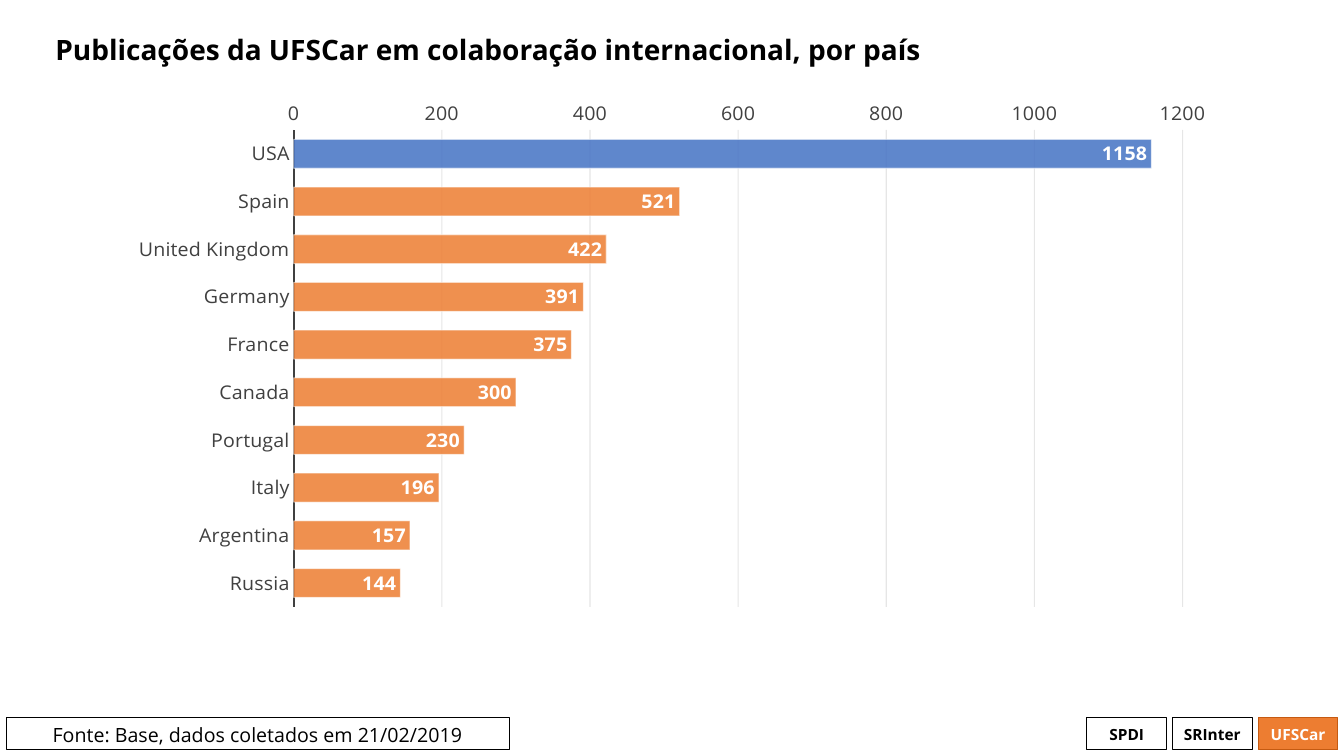
from lxml.etree import SubElement
from pptx import Presentation
from pptx.chart.data import CategoryChartData
from pptx.dml.color import RGBColor
from pptx.enum.chart import XL_AXIS_CROSSES, XL_CHART_TYPE, XL_LABEL_POSITION, XL_TICK_MARK
from pptx.enum.shapes import MSO_SHAPE
from pptx.enum.text import MSO_ANCHOR, PP_ALIGN
from pptx.oxml import parse_xml
from pptx.oxml.ns import nsdecls, qn
from pptx.util import Inches, Pt

BLACK = RGBColor(0x00, 0x00, 0x00)
WHITE = RGBColor(0xFF, 0xFF, 0xFF)
GRAY = RGBColor(0x40, 0x40, 0x40)
INK = RGBColor(0x0D, 0x0D, 0x0D)
ORANGE = RGBColor(0xED, 0x7D, 0x31)
RUST = RGBColor(0xC5, 0x5A, 0x11)
BLUE = RGBColor(0x44, 0x72, 0xC4)
FACE = "Open Sans"

DATA = {
    "USA": 1158, "Spain": 521, "United Kingdom": 422, "Germany": 391,
    "France": 375, "Canada": 300, "Portugal": 230, "Italy": 196,
    "Argentina": 157, "Russia": 144,
}
TABS = [("SPDI", None, BLACK, BLACK), ("SRInter", None, BLACK, BLACK),
        ("UFSCar", ORANGE, RUST, WHITE)]


def style(font, size, color, bold=False):
    for name, value in {"name": FACE, "size": Pt(size), "bold": bold}.items():
        setattr(font, name, value)
    font.color.rgb = color


def fade(fill, color, percent):
    fill.solid()
    fill.fore_color.rgb = color
    tint = next(fill._xPr.find(qn("a:solidFill")).iter(qn("a:srgbClr")))
    SubElement(tint, qn("a:alpha")).set("val", str(percent * 1000))


def paint(form, color):
    fade(form.fill, color, 85)
    form.line.width = Pt(0.75)
    fade(form.line.fill, WHITE, 50)


def label(frame, text, size, color, bold, anchor, align):
    frame.word_wrap = True
    frame.vertical_anchor = anchor
    par = frame.paragraphs[0]
    par.alignment = align
    run = par.add_run()
    run.text = text
    style(run.font, size, color, bold)
    return par


def add_box(slide, box, text, fill, edge, color, size, bold, anchor):
    shape = slide.shapes.add_shape(MSO_SHAPE.RECTANGLE, *map(Inches, box))
    shape.shadow.inherit = False
    if fill is None:
        shape.fill.background()
    else:
        shape.fill.solid()
        shape.fill.fore_color.rgb = fill
    shape.line.color.rgb = edge
    shape.line.width = Pt(0.75)
    label(shape.text_frame, text, size, color, bold, anchor, PP_ALIGN.CENTER)


def add_foot(slide, left, top, width, height):
    add_box(slide, (left, top, 4.99, height), "Fonte: Base, dados coletados em 21/02/2019",
            None, BLACK, BLACK, 14, False, MSO_ANCHOR.TOP)
    wide, step = 0.79, 0.85
    start = left + width - wide - step * (len(TABS) - 1)
    for i, (text, fill, edge, color) in enumerate(TABS):
        add_box(slide, (start + i * step, top, wide, height), text,
                fill, edge, color, 11, True, MSO_ANCHOR.MIDDLE)


def add_title(slide, *box):
    frame = slide.shapes.add_textbox(*map(Inches, box)).text_frame
    par = label(frame, "Publicações da UFSCar em colaboração internacional, por país",
                20, BLACK, True, MSO_ANCHOR.MIDDLE, PP_ALIGN.LEFT)
    par.line_spacing = 0.9


def set_plot(chart, **sides):
    area = chart._chartSpace.find(".//" + qn("c:plotArea"))
    for old in area.findall(qn("c:layout")):
        area.remove(old)
    modes = {"layoutTarget": "inner", "xMode": "edge", "yMode": "edge"}
    items = "".join(f'<c:{k} val="{v}"/>' for k, v in {**modes, **sides}.items())
    area.insert(0, parse_xml(
        f'<c:layout {nsdecls("c")}><c:manualLayout>{items}</c:manualLayout></c:layout>'))


def add_bars(slide, *box):
    data = CategoryChartData()
    data.categories = list(DATA)
    data.add_series("Series 1", list(DATA.values()))
    chart = slide.shapes.add_chart(XL_CHART_TYPE.BAR_CLUSTERED,
                                   *map(Inches, box), data).chart
    style(chart.font, 14, BLACK)
    chart.has_legend = False
    chart.has_title = False
    set_plot(chart, x=0.16, y=0.02, w=0.8, h=0.89)

    cats, vals = chart.category_axis, chart.value_axis
    for axis in (cats, vals):
        axis.major_tick_mark = axis.minor_tick_mark = XL_TICK_MARK.NONE
        style(axis.tick_labels.font, 14, GRAY)
    cats.reverse_order = True
    cats.crosses = XL_AXIS_CROSSES.MAXIMUM
    cats.format.line.color.rgb = GRAY
    cats.format.line.width = Pt(1.5)
    for name, value in {"minimum_scale": 0, "maximum_scale": 1200, "major_unit": 200}.items():
        setattr(vals, name, value)
    vals.format.line.fill.background()
    grid = vals.major_gridlines.format.line
    grid.width = Pt(0.75)
    fade(grid.fill, INK, 10)

    plot = chart.plots[0]
    plot.gap_width = 65
    plot.vary_by_categories = False
    bars = plot.series[0]
    paint(bars.format, ORANGE)
    paint(bars.points[0].format, BLUE)
    tags = bars.data_labels
    tags.show_value = True
    tags.position = XL_LABEL_POSITION.INSIDE_END
    style(tags.font, 14, WHITE, True)


def main():
    deck = Presentation()
    deck.slide_width, deck.slide_height = Inches(13.33), Inches(7.5)
    slide = deck.slides.add_slide(deck.slide_layouts[6])
    add_foot(slide, 0.06, 7.12, 13.21, 0.32)
    add_title(slide, 0.45, 0.06, 12.41, 0.91)
    add_bars(slide, 1.15, 0.99, 11.02, 5.51)
    deck.save("out.pptx")


if __name__ == "__main__":
    main()
